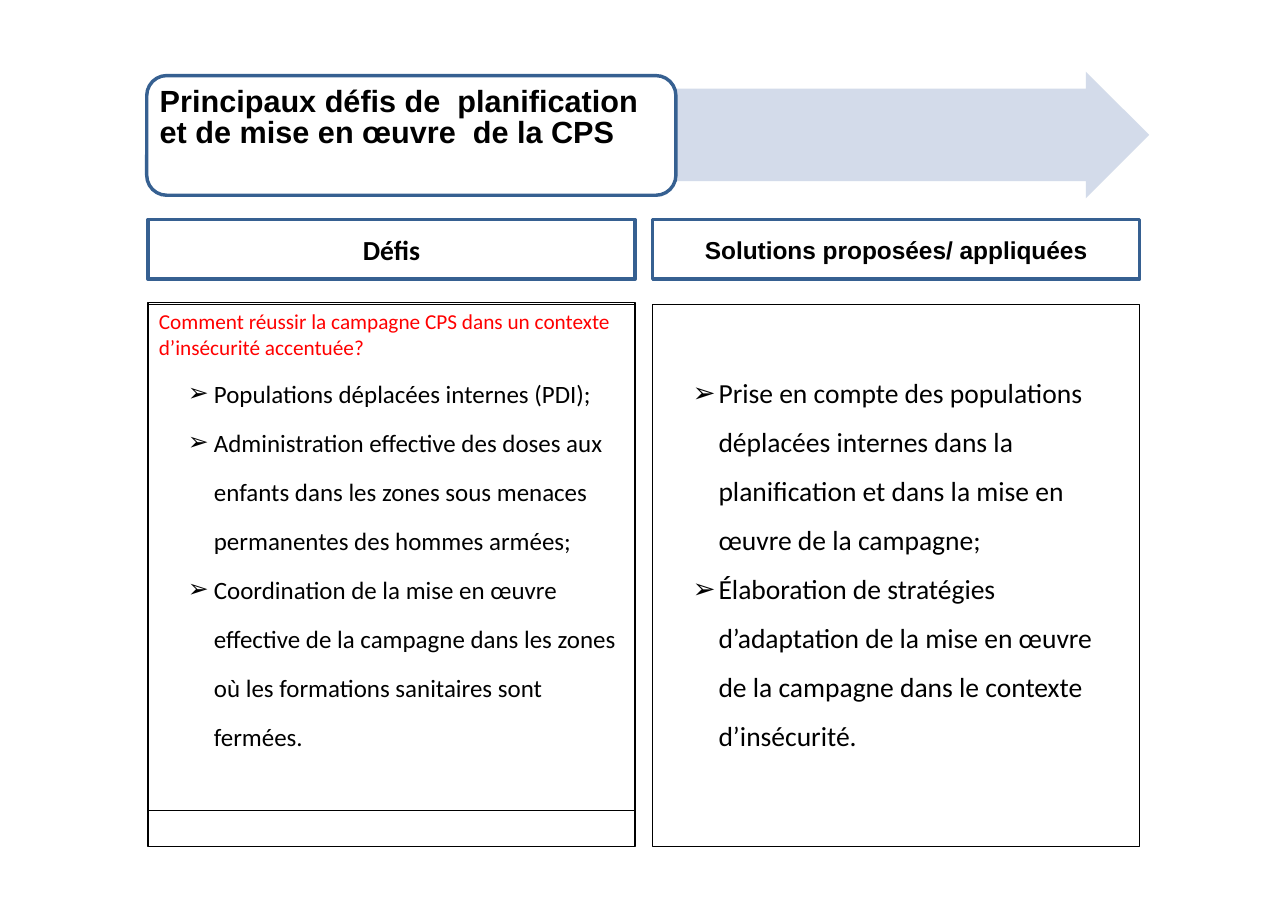
from dataclasses import dataclass

from lxml.etree import SubElement
from pptx import Presentation
from pptx.dml.color import RGBColor
from pptx.enum.shapes import MSO_SHAPE
from pptx.enum.text import MSO_ANCHOR, PP_ALIGN
from pptx.oxml.ns import qn
from pptx.shapes.autoshape import Shape
from pptx.slide import Slide
from pptx.text.text import TextFrame
from pptx.util import Pt


@dataclass(frozen=True)
class Theme:
    black: RGBColor = RGBColor(0x00, 0x00, 0x00)
    white: RGBColor = RGBColor(0xFF, 0xFF, 0xFF)
    red: RGBColor = RGBColor(0xFF, 0x00, 0x00)
    blue: RGBColor = RGBColor(0x36, 0x60, 0x91)
    pale_blue: RGBColor = RGBColor(0xCF, 0xD8, 0xE8)
    title_size: float = 20
    question_size: float = 13.9
    bullet_spacing: float = 32


@dataclass(frozen=True)
class Box:
    left: float
    top: float
    width: float
    height: float


@dataclass(frozen=True)
class Column:
    header: str
    header_font: str
    header_size: float
    bullet_size: float
    bullets: tuple[str, ...]
    text_top: float
    text_height: float
    text_width: float
    question: str = ""
    text_line: float = 0


THEME = Theme()
COLUMN_LEFT = 96.7
COLUMN_PITCH = 329.8
COLUMN_WIDTH = 318.3
COLUMNS = (
    Column(
        "Défis", "Calibri", 18, 16.3,
        (
            "Populations déplacées internes (PDI);",
            "Administration effective des doses aux enfants dans les zones "
            "sous menaces permanentes des hommes armées;",
            "Coordination de la mise en œuvre effective de la campagne dans "
            "les zones où les formations sanitaires sont fermées.",
        ),
        198, 332, COLUMN_WIDTH,
        "Comment réussir la campagne CPS dans un contexte d’insécurité accentuée?",
        0.75,
    ),
    Column(
        "Solutions proposées/ appliquées", "Arial", 16, 18,
        (
            "Prise en compte des populations déplacées internes dans la "
            "planification et dans la mise en œuvre de la campagne;",
            "Élaboration de stratégies d’adaptation de la mise en œuvre de la "
            "campagne dans le contexte d’insécurité.",
        ),
        232, 298, 306.7,
    ),
)


def add_box(
    slide: Slide, kind: MSO_SHAPE, box: Box, line: RGBColor | None = None,
    line_width: float = 0, fill: RGBColor | None = None,
) -> Shape:
    shape = slide.shapes.add_shape(
        kind, Pt(box.left), Pt(box.top), Pt(box.width), Pt(box.height)
    )
    shape.shadow.inherit = False
    if fill is None:
        shape.fill.background()
    else:
        shape.fill.solid()
        shape.fill.fore_color.rgb = fill
    if line is None:
        shape.line.fill.background()
    else:
        shape.line.color.rgb = line
        shape.line.width = Pt(line_width)
    return shape


def add_text(
    frame: TextFrame, text: str, font: str, size: float, color: RGBColor,
    bold: bool = False, align: PP_ALIGN = PP_ALIGN.LEFT, bullet: bool = False,
) -> None:
    paragraph = frame.paragraphs[0] if not frame.text else frame.add_paragraph()
    paragraph.text = text
    paragraph.alignment = align
    paragraph.font.name = font
    paragraph.font.size = Pt(size)
    paragraph.font.bold = bold
    paragraph.font.color.rgb = color
    if bullet:
        paragraph.level = 1
        paragraph.line_spacing = Pt(THEME.bullet_spacing)
        properties = paragraph._p.get_or_add_pPr()
        properties.set("marL", str(Pt(36)))
        properties.set("indent", str(-Pt(17)))
        SubElement(properties, qn("a:buFont"), typeface="Arial")
        SubElement(properties, qn("a:buChar"), char="➢")


def add_title(slide: Slide) -> None:
    arrow = add_box(
        slide, MSO_SHAPE.RIGHT_ARROW, Box(440, 46.8, 311, 82.8), fill=THEME.pale_blue
    )
    arrow.adjustments[0] = 0.73
    arrow.adjustments[1] = 0.5
    color = arrow.fill._xPr.find(qn("a:solidFill")).find(qn("a:srgbClr"))
    SubElement(color, qn("a:alpha"), val="90000")
    add_box(
        slide, MSO_SHAPE.ROUNDED_RECTANGLE, Box(95.9, 49.4, 345.8, 78.2),
        THEME.blue, 2.25, THEME.white,
    )
    title = slide.shapes.add_textbox(Pt(104.4), Pt(52.6), Pt(319), Pt(46))
    frame = title.text_frame
    frame.word_wrap = True
    frame.margin_left = frame.margin_right = frame.margin_bottom = 0
    frame.margin_top = Pt(4.3)
    add_text(
        frame, "Principaux défis de  planification et de mise en œuvre  de la CPS",
        "Arial", THEME.title_size, THEME.black, bold=True,
    )
    frame.paragraphs[0].line_spacing = 0.86


def add_column(slide: Slide, column: Column, left: float) -> None:
    header = add_box(
        slide, MSO_SHAPE.RECTANGLE, Box(left, 143.5, COLUMN_WIDTH, 39),
        THEME.blue, 2.25,
    )
    header.text_frame.vertical_anchor = MSO_ANCHOR.MIDDLE
    add_text(
        header.text_frame, column.header, column.header_font, column.header_size,
        THEME.black, bold=True, align=PP_ALIGN.CENTER,
    )
    add_box(
        slide, MSO_SHAPE.RECTANGLE, Box(left, 198.9, COLUMN_WIDTH, 354.2),
        THEME.black, 0.75,
    )
    body = add_box(
        slide, MSO_SHAPE.RECTANGLE,
        Box(left, column.text_top, column.text_width, column.text_height),
        THEME.black if column.text_line else None, column.text_line,
    )
    frame = body.text_frame
    frame.word_wrap = True
    frame.vertical_anchor = MSO_ANCHOR.TOP
    if column.question:
        add_text(frame, column.question, "Calibri", THEME.question_size, THEME.red)
    for bullet in column.bullets:
        add_text(
            frame, bullet, "Calibri", column.bullet_size, THEME.black, bullet=True
        )


def main() -> None:
    presentation = Presentation()
    presentation.slide_width = Pt(841.68)
    presentation.slide_height = Pt(595.44)
    slide = presentation.slides.add_slide(presentation.slide_layouts[6])
    add_title(slide)
    for index, column in enumerate(COLUMNS):
        add_column(slide, column, COLUMN_LEFT + index * COLUMN_PITCH)
    presentation.save("out.pptx")


if __name__ == "__main__":
    main()
